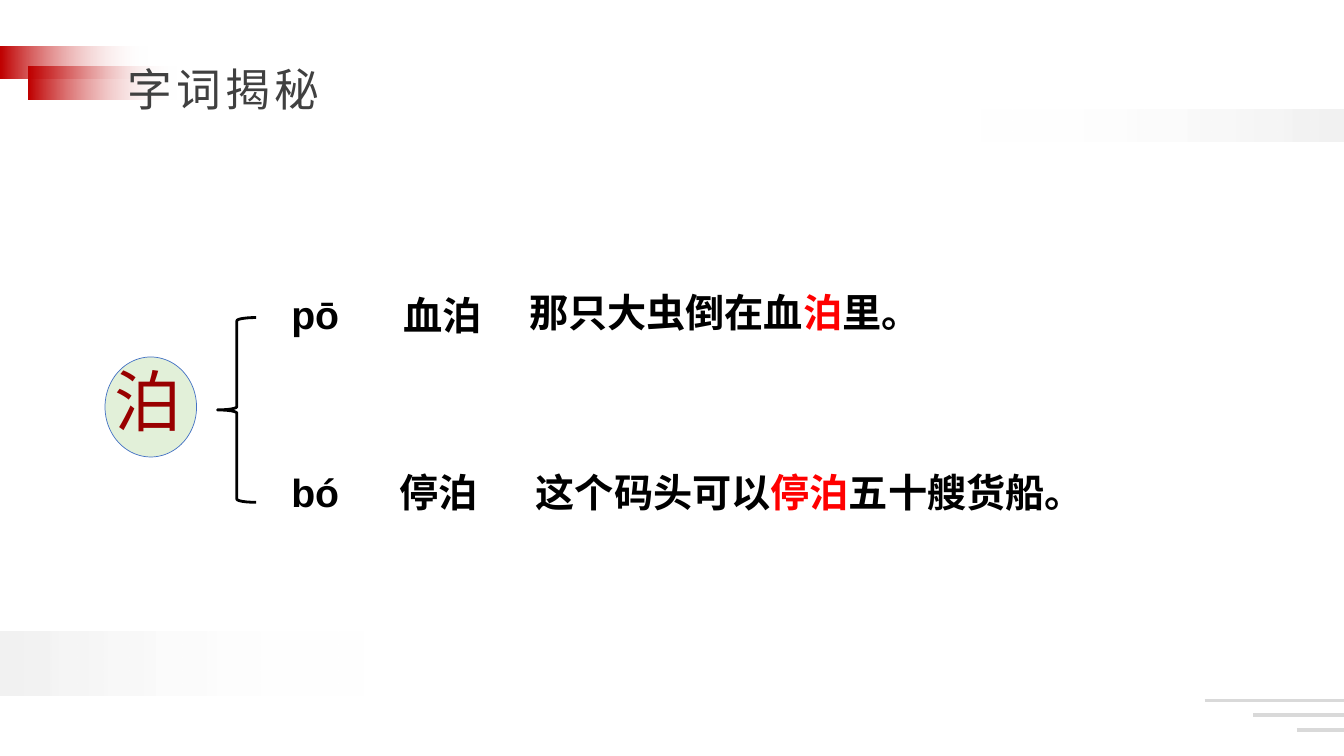
from dataclasses import dataclass

from lxml.etree import SubElement
from pptx import Presentation
from pptx.dml.color import RGBColor
from pptx.enum.shapes import MSO_CONNECTOR as Connector, MSO_SHAPE as Shape
from pptx.enum.text import MSO_AUTO_SIZE as AutoSize
from pptx.oxml.ns import qn
from pptx.util import Inches, Pt

COLUMNS, ROWS = 160, 90  # square cells, twelve to the inch
CELL = Inches(1) / 12


@dataclass(frozen=True)
class Theme:
    red: str = "C00000"
    pale: str = "F2F2F2"
    white: str = "FFFFFF"
    rule: str = "D9D9D9"
    heading: str = "404040"
    circle: str = "E2F0D9"
    circle_line: str = "4472C4"
    character: str = "990000"
    ink: str = "000000"
    highlight: str = "FF0000"
    heading_font: str = "Karla"
    body_font: str = "Arial"
    heading_size: int = 32
    character_size: int = 48
    body_size: int = 28


def cells(*counts):
    return [round(count * CELL) for count in counts]


def rgb(code):
    return RGBColor.from_string(code)


class Page:
    def __init__(self, deck, theme):
        self.theme = theme
        self.shapes = deck.slides.add_slide(deck.slide_layouts[6]).shapes

    def shape(self, kind, area, fill=None, line=None, width=1):
        item = self.shapes.add_shape(kind, *cells(*area))
        item.shadow.inherit = False
        if fill:
            item.fill.solid()
            item.fill.fore_color.rgb = rgb(fill)
        else:
            item.fill.background()
        if line:
            item.line.color.rgb = rgb(line)
            item.line.width = Pt(width)
        else:
            item.line.fill.background()
        return item

    def fading_bar(self, area, color, mirrored=False):
        bar = self.shape(Shape.RECTANGLE, area)
        bar.fill.gradient()
        bar.fill.gradient_angle = 0
        for stop, code in zip(bar.fill.gradient_stops, (color, self.theme.white)):
            stop.color.rgb = rgb(code)
        # The far end is fully transparent
        far_color = bar.element.spPr.findall(".//" + qn("a:srgbClr"))[-1]
        SubElement(far_color, qn("a:alpha"), val="0")
        if mirrored:
            bar.element.spPr.xfrm.set("flipH", "1")

    def rule(self, left, top):
        rule = self.shapes.add_connector(
            Connector.STRAIGHT, *cells(left, top, COLUMNS, top))
        rule.line.color.rgb = rgb(self.theme.rule)
        rule.line.width = Pt(2.75)
        SubElement(rule.element.spPr, qn("a:effectLst"))

    def text(self, area, pieces, size, font, bold=False, wrap=False,
             leading=None, tracking=None):
        """Write one paragraph from (words, colour) pieces."""
        box = self.shapes.add_textbox(*cells(*area))
        frame = box.text_frame
        frame.word_wrap = wrap
        frame.auto_size = AutoSize.SHAPE_TO_FIT_TEXT
        para = frame.paragraphs[0]
        if leading:
            para.line_spacing = leading
        for words, color in pieces:
            span = para.add_run()
            span.text = words
            span.font.name = font
            span.font.size = Pt(size)
            span.font.bold = bold
            span.font.color.rgb = rgb(color)
            if tracking:
                span.font._element.set("spc", str(tracking * 100))

    def body(self, left, top, width, *pieces, wrap=False):
        self.text((left, top, width, 6.8), pieces, self.theme.body_size,
                  self.theme.body_font, bold=True, wrap=wrap)


def main():
    deck = Presentation()
    deck.slide_width, deck.slide_height = cells(COLUMNS, ROWS)
    theme = Theme()
    page = Page(deck, theme)

    # Background bars and corner rules
    for left, top in ((0, 5.5), (3.4, 7.9)):
        page.fading_bar((left, top, 17.6, 3.9), theme.red)
    for step, left in enumerate((143.4, 149.2, 154.4)):
        page.rule(left, 83.4 + 1.75 * step)
    page.fading_bar((0, 75.2, 43.4, 7.6), theme.pale)
    page.fading_bar((116.6, 13, 43.4, 3.9), theme.pale, mirrored=True)

    # Heading
    page.text((14, 3.6, 33.4, 10.1), [("字词揭秘", theme.heading)],
              theme.heading_size, theme.heading_font, wrap=True,
              leading=1.5, tracking=3)

    # Character and brace
    page.shape(Shape.OVAL, (12.5, 42.5, 10.9, 11.9), theme.circle,
               theme.circle_line, 0.5)
    page.text((12.5, 42.2, 10.6, 10.9), [("泊", theme.character)],
              theme.character_size, theme.body_font, wrap=True)
    page.shape(Shape.LEFT_BRACE, (25.9, 37.8, 4.6, 22), line=theme.ink, width=2)

    # Readings
    ink, highlight = theme.ink, theme.highlight
    page.body(33.5, 34, 8.5, ("pō", ink))
    page.body(33.5, 55.2, 8.4, ("bó", ink))

    # Words
    page.body(46.4, 55.2, 12.1, ("停泊", ink))
    page.body(46.9, 34.1, 15.8, ("血泊", ink), wrap=True)

    # Example sentences
    page.body(62.6, 55.1, 70.2, ("这个码头可以", ink), ("停泊", highlight),
              ("五十艘货船。", ink))
    page.body(61.8, 33.7, 50.8, ("那只大虫倒在血", ink), ("泊", highlight),
              ("里。", ink))

    deck.save("out.pptx")


if __name__ == "__main__":
    main()
